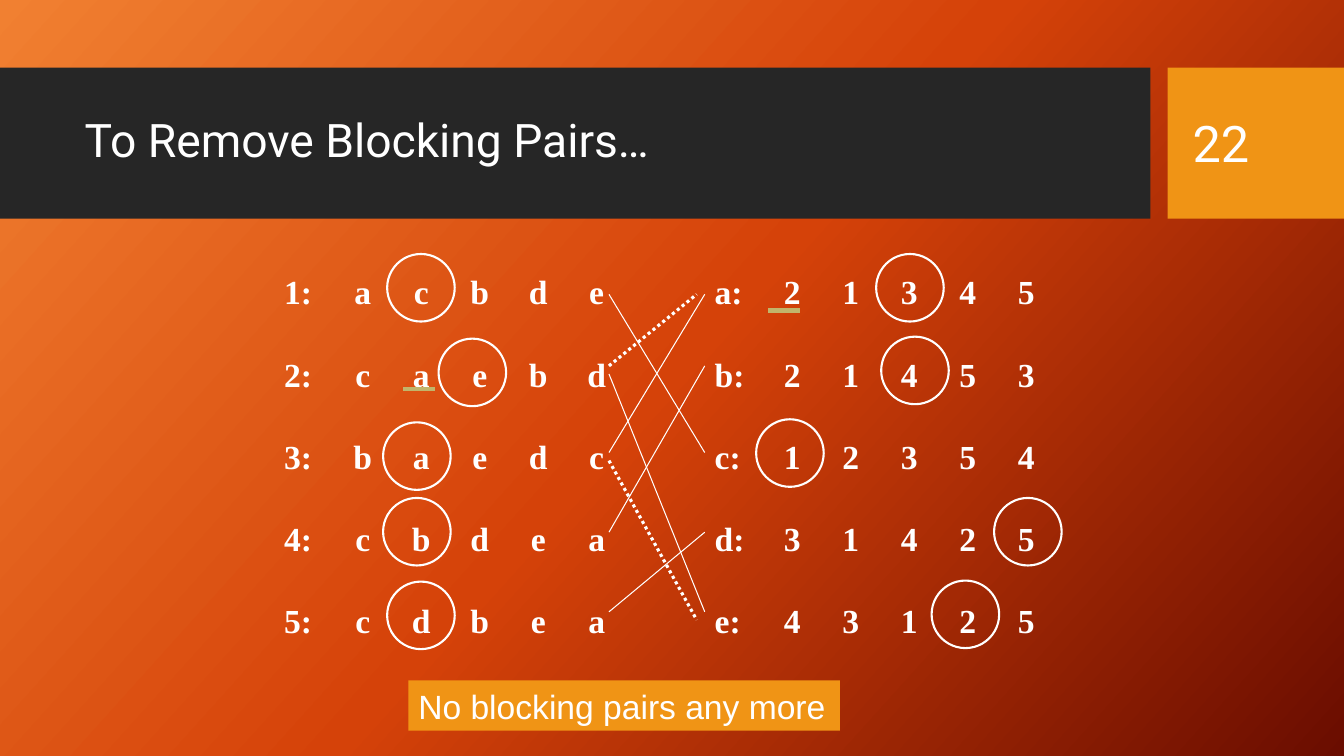
from copy import deepcopy
from dataclasses import dataclass

from lxml import etree
from pptx import Presentation
from pptx.dml.color import RGBColor
from pptx.enum.dml import MSO_LINE
from pptx.enum.shapes import MSO_CONNECTOR, MSO_SHAPE
from pptx.enum.text import MSO_ANCHOR, PP_ALIGN
from pptx.oxml.ns import qn
from pptx.shapes.autoshape import Shape
from pptx.slide import Slide
from pptx.text.text import _Paragraph as Paragraph
from pptx.util import Inches, Pt

RECTANGLE = MSO_SHAPE.RECTANGLE
OVAL = MSO_SHAPE.OVAL
STRAIGHT = MSO_CONNECTOR.STRAIGHT
DOTTED = MSO_LINE.ROUND_DOT
MIDDLE = MSO_ANCHOR.MIDDLE
LEFT = PP_ALIGN.LEFT

WHITE = RGBColor(0xFF, 0xFF, 0xFF)
CHARCOAL = RGBColor(0x26, 0x26, 0x26)
AMBER = RGBColor(0xF0, 0x94, 0x15)
OLIVE = RGBColor(0xC1, 0xB5, 0x6B)
GRADIENT = (
    (0, RGBColor(0xF1, 0x80, 0x31)),
    (0.5, RGBColor(0xD5, 0x42, 0x09)),
    (1, RGBColor(0x6A, 0x0D, 0x00)),
)
CIRCLE_SIZE = 0.67
COLUMN_STEP = 0.58
LEFT_COLUMN = 0.78
RIGHT_LABEL = 4.27
RIGHT_COLUMN = 5.04


@dataclass(frozen=True)
class Preference:
    left: str
    left_choices: str
    right: str
    right_choices: str


@dataclass(frozen=True)
class Line:
    start: tuple[float, float]
    end: tuple[float, float]
    width: float = 0.75
    color: RGBColor = WHITE
    dotted: bool = False


PREFERENCES = (
    Preference("1:", "acbde", "a:", "21345"),
    Preference("2:", "caebd", "b:", "21453"),
    Preference("3:", "baedc", "c:", "12354"),
    Preference("4:", "cbdea", "d:", "31425"),
    Preference("5:", "cdbea", "e:", "43125"),
)
CIRCLES = (
    (3.84, 2.52), (4.35, 3.36), (3.8, 4.19), (3.8, 4.94), (3.84, 5.77),
    (8.69, 2.52), (8.74, 3.34), (7.5, 4.16), (9.86, 4.94), (9.24, 5.76),
)
LINES = (
    Line((6.04, 2.92), (6.99, 4.49)),
    Line((6.04, 3.71), (6.99, 6.07)),
    Line((6.04, 4.49), (6.99, 2.92)),
    Line((6.04, 5.28), (6.99, 3.63)),
    Line((6.04, 6.07), (6.99, 5.28)),
    Line((4, 3.86), (4.31, 3.86), 3, OLIVE),
    Line((7.62, 3.08), (7.93, 3.08), 3, OLIVE),
    Line((6.04, 3.63), (6.91, 2.92), 2.25, dotted=True),
    Line((6.04, 4.57), (6.91, 6.15), 2.25, dotted=True),
)


def paint_background(slide: Slide) -> None:
    fill = slide.background.fill
    fill.gradient()
    fill.gradient_angle = 318
    stop_list = slide.element.find(".//" + qn("a:gsLst"))
    stop_list.append(deepcopy(stop_list[-1]))
    for stop, (position, color) in zip(fill.gradient_stops, GRADIENT):
        stop.position = position
        stop.color.rgb = color


def add_box(slide: Slide, left: float, top: float, width: float, height: float, color: RGBColor) -> Shape:
    box = slide.shapes.add_shape(RECTANGLE, Inches(left), Inches(top), Inches(width), Inches(height))
    box.shadow.inherit = False
    box.fill.solid()
    box.fill.fore_color.rgb = color
    box.line.fill.background()
    return box


def add_circle(slide: Slide, left: float, top: float) -> None:
    circle = slide.shapes.add_shape(
        OVAL, Inches(left), Inches(top), Inches(CIRCLE_SIZE), Inches(CIRCLE_SIZE)
    )
    circle.shadow.inherit = False
    circle.fill.background()
    circle.line.color.rgb = WHITE
    circle.line.width = Pt(1.5)


def add_line(slide: Slide, line: Line) -> None:
    start_x, start_y = map(Inches, line.start)
    end_x, end_y = map(Inches, line.end)
    connector = slide.shapes.add_connector(STRAIGHT, start_x, start_y, end_x, end_y)
    connector.line.color.rgb = line.color
    connector.line.width = Pt(line.width)
    if line.dotted:
        connector.line.dash_style = DOTTED
    properties = connector.element.find(qn("p:spPr"))
    etree.SubElement(properties, qn("a:effectLst"))


def style_paragraph(paragraph: Paragraph, font_name: str, size: float, bold: bool = False) -> None:
    paragraph.alignment = LEFT
    paragraph.font.name = font_name
    paragraph.font.size = Pt(size)
    paragraph.font.bold = bold
    paragraph.font.color.rgb = WHITE


def add_tab_stops(paragraph: Paragraph) -> None:
    stops = [(LEFT_COLUMN + COLUMN_STEP * column, "ctr") for column in range(5)]
    stops.append((RIGHT_LABEL, "l"))
    stops += [(RIGHT_COLUMN + COLUMN_STEP * column, "ctr") for column in range(5)]
    properties = paragraph._p.get_or_add_pPr()
    tab_list = etree.SubElement(properties, qn("a:tabLst"))
    for position, alignment in stops:
        etree.SubElement(tab_list, qn("a:tab"), pos=str(Inches(position)), algn=alignment)


def add_title(slide: Slide) -> None:
    title = slide.shapes.title
    title.left, title.top = Inches(0.74), Inches(0.82)
    title.width, title.height = Inches(10.51), Inches(1.18)
    title.text_frame.text = "To Remove Blocking Pairs…"
    title.text_frame.vertical_anchor = MIDDLE
    paragraph = title.text_frame.paragraphs[0]
    paragraph.line_spacing = 0.9
    style_paragraph(paragraph, "Roboto", 33)
    title.element.getparent().append(title.element)


def add_slide_number(slide: Slide) -> None:
    number = slide.shapes.add_textbox(Inches(11.73), Inches(0.82), Inches(1.26), Inches(1.19))
    number.text_frame.word_wrap = True
    number.text_frame.vertical_anchor = MIDDLE
    number.text_frame.text = "22"
    style_paragraph(number.text_frame.paragraphs[0], "Roboto", 36)


def add_preferences(slide: Slide) -> None:
    table = slide.shapes.add_textbox(Inches(2.72), Inches(2.64), Inches(8.06), Inches(3.68))
    frame = table.text_frame
    frame.word_wrap = True
    for index, row in enumerate(PREFERENCES):
        paragraph = frame.add_paragraph() if index else frame.paragraphs[0]
        add_tab_stops(paragraph)
        cells = (row.left, *row.left_choices, row.right, *row.right_choices)
        paragraph.add_run().text = "\t".join(cells)
        if index:
            paragraph.space_before = Pt(30)
        style_paragraph(paragraph, "Times New Roman", 24, True)


def add_conclusion(slide: Slide) -> None:
    conclusion = add_box(slide, 4.05, 6.75, 4.28, 0.5, AMBER)
    conclusion.text_frame.word_wrap = False
    conclusion.text_frame.vertical_anchor = MIDDLE
    conclusion.text_frame.text = "No blocking pairs any more"
    style_paragraph(conclusion.text_frame.paragraphs[0], "Arial", 24)


def main() -> None:
    presentation = Presentation()
    presentation.slide_width = Inches(13.33)
    presentation.slide_height = Inches(7.5)
    slide = presentation.slides.add_slide(presentation.slide_layouts[5])
    paint_background(slide)
    add_box(slide, 0, 0.67, 11.41, 1.5, CHARCOAL)
    add_box(slide, 11.58, 0.67, 1.75, 1.5, AMBER)
    add_title(slide)
    add_preferences(slide)
    for left, top in CIRCLES:
        add_circle(slide, left, top)
    for line in LINES:
        add_line(slide, line)
    add_conclusion(slide)
    add_slide_number(slide)
    presentation.save("out.pptx")


if __name__ == "__main__":
    main()
